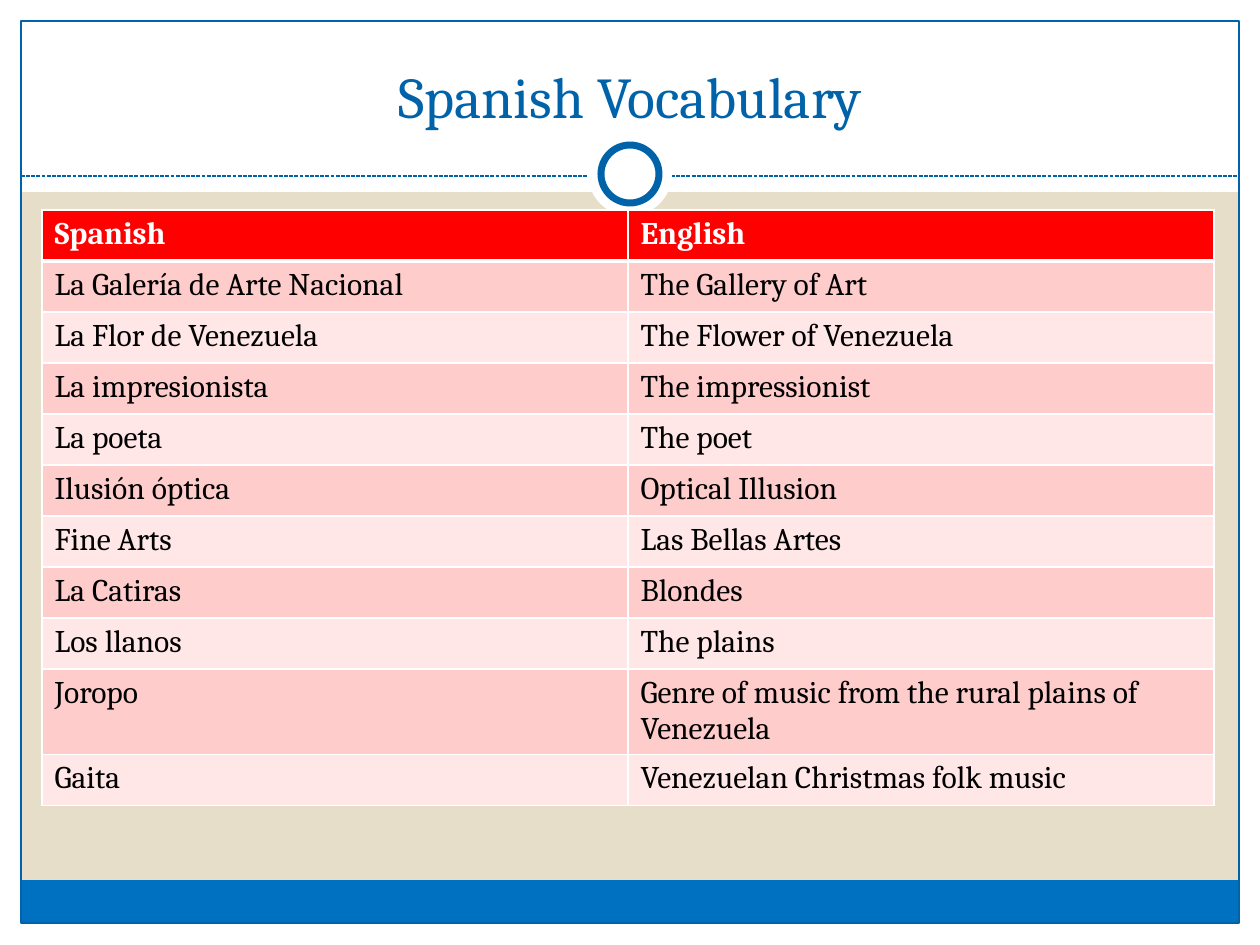
from dataclasses import dataclass

from lxml.etree import SubElement
from pptx import Presentation
from pptx.dml.color import RGBColor
from pptx.enum.dml import MSO_LINE_DASH_STYLE as Dash
from pptx.enum.shapes import MSO_CONNECTOR as Connector, MSO_SHAPE as Shape
from pptx.enum.text import MSO_ANCHOR as Anchor, PP_ALIGN as Align
from pptx.oxml.ns import qn
from pptx.util import Pt

PX = 914400 / 126
PAGE_WIDTH, PAGE_HEIGHT = 1260, 945


@dataclass(frozen=True)
class Theme:
    font: str = "Cambria"
    title_size: int = 33
    table_size: int = 18
    sand: str = "E7DEC9"
    white: str = "FFFFFF"
    black: str = "000000"
    outline: str = "0063A9"
    footer: str = "0070C0"
    header: str = "FF0000"
    bands: tuple = ("FFCCCC", "FFE7E7")


THEME = Theme()

VOCABULARY = [
    ("Spanish", "English"),
    ("La Galería de Arte Nacional", "The Gallery of Art"),
    ("La Flor de Venezuela", "The Flower of Venezuela"),
    ("La impresionista", "The impressionist"),
    ("La poeta", "The poet"),
    ("Ilusión óptica", "Optical Illusion"),
    ("Fine Arts", "Las Bellas Artes"),
    ("La Catiras", "Blondes"),
    ("Los llanos", "The plains"),
    ("Joropo", "Genre of music from the rural plains of Venezuela"),
    ("Gaita", "Venezuelan Christmas folk music"),
]


def emu(*lengths):
    return [round(length * PX) for length in lengths]


def rgb(code):
    return RGBColor.from_string(code)


def add_figure(page, kind, box, fill=None, line=None, width=0.75):
    figure = page.shapes.add_shape(kind, *emu(*box))
    figure.shadow.inherit = False
    if fill:
        figure.fill.solid()
        figure.fill.fore_color.rgb = rgb(fill)
    else:
        figure.fill.background()
    if line:
        figure.line.color.rgb = rgb(line)
        figure.line.width = Pt(width)
    else:
        figure.line.fill.background()


def format_text(frame, size, color, bold=False):
    for para in frame.paragraphs:
        for span in para.runs:
            span.font.name = THEME.font
            span.font.size = Pt(size)
            span.font.bold = bold
            span.font.color.rgb = rgb(color)


def draw_frame(page, box, header_height, footer_height):
    """Surround the box with white margins, then add its footer and outline."""
    left, top, width, height = box
    right, bottom = left + width, top + height
    margins = [
        (0, bottom, PAGE_WIDTH, PAGE_HEIGHT - bottom),
        (0, 0, PAGE_WIDTH, header_height),
        (0, 0, left, PAGE_HEIGHT),
        (right, 0, PAGE_WIDTH - right, PAGE_HEIGHT),
    ]
    for margin in margins:
        add_figure(page, Shape.RECTANGLE, margin, THEME.white)
    footer = (left, bottom - footer_height, width, footer_height)
    add_figure(page, Shape.RECTANGLE, footer, THEME.footer)
    add_figure(page, Shape.RECTANGLE, box, line=THEME.outline)


def draw_divider(page, box):
    """Draw a dashed rule with a ring centred in the box."""
    left, top, width, height = box
    rule_y = top + height // 2 + 2
    rule = page.shapes.add_connector(
        Connector.STRAIGHT, *emu(left, rule_y, left + width, rule_y))
    rule.line.color.rgb = rgb(THEME.outline)
    rule.line.width = Pt(0.75)
    rule.line.dash_style = Dash.SQUARE_DOT
    SubElement(rule.element.spPr, qn("a:effectLst"))

    disc_left = left + (width - height) // 2
    add_figure(page, Shape.OVAL, (disc_left, top, height, height), THEME.white)
    inset = 13
    ring_size = height - 2 * inset
    ring = (disc_left + inset, top + inset, ring_size, ring_size)
    add_figure(page, Shape.OVAL, ring, THEME.white, THEME.outline, 4)


def place_title(page, box, text):
    title = page.shapes.title
    title.left, title.top, title.width, title.height = emu(*box)
    frame = title.text_frame
    frame.text = text
    frame.vertical_anchor = Anchor.BOTTOM
    frame.paragraphs[0].alignment = Align.CENTER
    format_text(frame, THEME.title_size, THEME.outline)
    title.element.getparent().append(title.element)  # in front of the header


def set_borders(cell, widths):
    properties = cell._tc.get_or_add_tcPr()
    for side, width in zip("LRTB", widths):
        border = SubElement(properties, qn(f"a:ln{side}"), w=str(Pt(width)))
        paint = SubElement(border, qn("a:solidFill"))
        SubElement(paint, qn("a:srgbClr"), val=THEME.white)


def place_vocabulary(page, box, rows):
    table = page.shapes.add_table(len(rows), len(rows[0]), *emu(*box)).table
    for row_index, words in enumerate(rows):
        is_header = row_index == 0
        fill = THEME.header if is_header else THEME.bands[(row_index - 1) % 2]
        color = THEME.white if is_header else THEME.black
        top_width = 3 if row_index == 1 else 1
        bottom_width = 3 if is_header else 1
        for column_index, word in enumerate(words):
            cell = table.cell(row_index, column_index)
            cell.text_frame.text = word
            format_text(cell.text_frame, THEME.table_size, color, is_header)
            set_borders(cell, (1, 1, top_width, bottom_width))
            cell.fill.solid()
            cell.fill.fore_color.rgb = rgb(fill)


def build_page(deck):
    page = deck.slides.add_slide(deck.slide_layouts[5])
    page.background.fill.solid()
    page.background.fill.fore_color.rgb = rgb(THEME.sand)
    draw_frame(page, (21, 21, 1218, 902), header_height=192, footer_height=43)
    draw_divider(page, (21, 132, 1218, 84))
    place_title(page, (42, 31, 1176, 105), "Spanish Vocabulary")
    place_vocabulary(page, (42, 210, 1172, 51 * len(VOCABULARY)), VOCABULARY)


def main():
    deck = Presentation()
    deck.slide_width, deck.slide_height = emu(PAGE_WIDTH, PAGE_HEIGHT)
    build_page(deck)
    deck.save("out.pptx")


if __name__ == "__main__":
    main()
